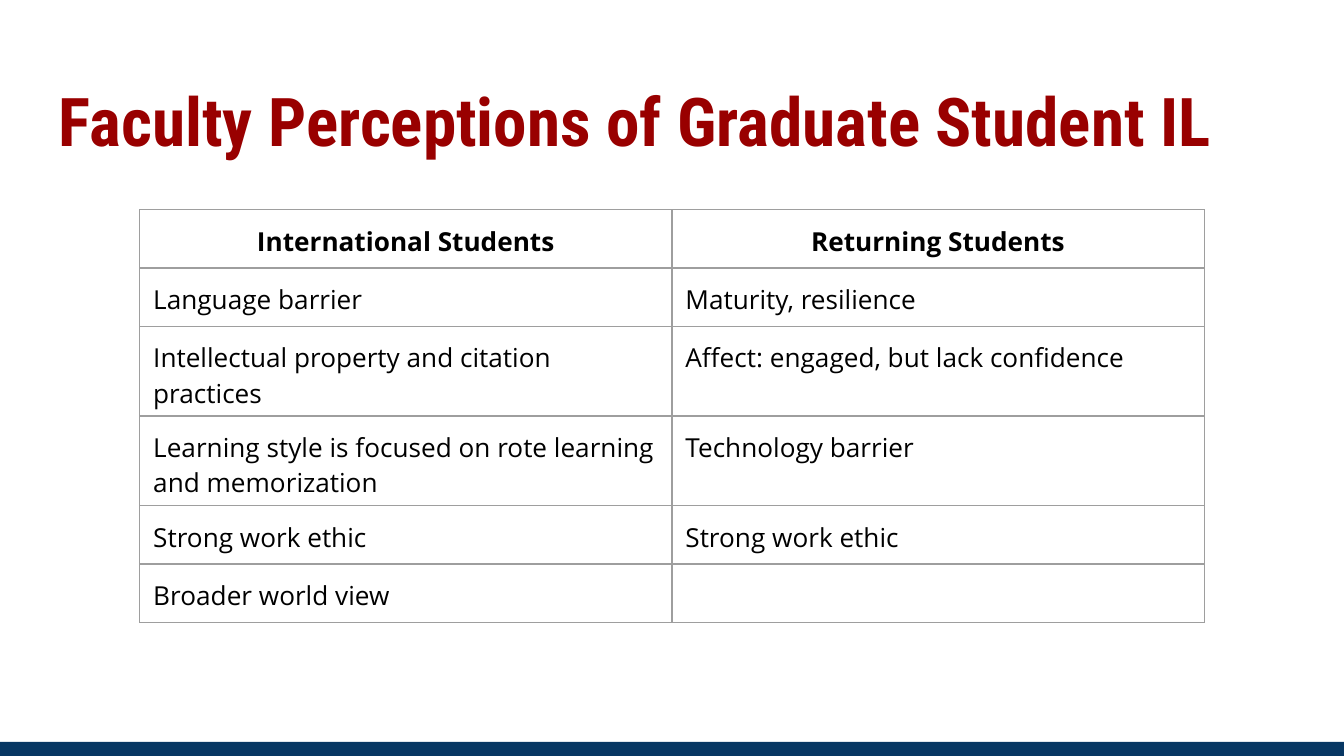
import pptx
import pptx.util
import pptx.dml.color
import pptx.enum.shapes
import pptx.enum.text
import pptx.oxml
import pptx.oxml.ns
from pptx.util import Inches

TITLE = "Faculty Perceptions of Graduate Student IL"
ROWS = [
    ("International Students", "Returning Students"),
    ("Language barrier", "Maturity, resilience"),
    ("Intellectual property and citation practices", "Affect: engaged, but lack confidence"),
    ("Learning style is focused on rote learning and memorization", "Technology barrier"),
    ("Strong work ethic", "Strong work ethic"),
    ("Broader world view", ""),
]
THEME = {
    "title": {"name": "Roboto Condensed", "size": 36, "color": "990000"},
    "body": {"name": "Open Sans", "size": 14, "color": "000000"},
    "footer": "073763",
    "border": "9E9E9E",
    "border_width": 0.75,
}
SLIDE_WIDTH = 10
SLIDE_HEIGHT = SLIDE_WIDTH * 9 / 16
FOOTER_TOP = 5.52
TABLE_LEFT, TABLE_TOP = 1.04, 1.56
TABLE_FRAME = 3.28
COLUMN_WIDTH, ROW_HEIGHT = 3.96, 0.42
MARGIN = 0.1


def rgb(value):
    return pptx.dml.color.RGBColor.from_string(value)


def style_paragraph(paragraph, style, bold):
    font = paragraph.font
    font.name = style["name"]
    font.size = pptx.util.Pt(style["size"])
    font.color.rgb = rgb(style["color"])
    font.bold = bold


def set_margins(box):
    box.margin_left = box.margin_right = Inches(MARGIN)
    box.margin_top = box.margin_bottom = Inches(MARGIN)


def add_borders(cell):
    """Outline all four sides; border elements must precede the cell fill."""
    properties = cell._tc.get_or_add_tcPr()
    width = pptx.util.Pt(THEME["border_width"])
    for index, side in enumerate(("lnL", "lnR", "lnT", "lnB")):
        border = pptx.oxml.parse_xml(
            f'<a:{side} {pptx.oxml.ns.nsdecls("a")} w="{width}"><a:solidFill>'
            f'<a:srgbClr val="{THEME["border"]}"/></a:solidFill></a:{side}>'
        )
        properties.insert(index, border)


def add_footer(slide):
    footer = slide.shapes.add_shape(
        pptx.enum.shapes.MSO_SHAPE.RECTANGLE,
        0, Inches(FOOTER_TOP), Inches(SLIDE_WIDTH), Inches(SLIDE_HEIGHT - FOOTER_TOP),
    )
    footer.shadow.inherit = False
    footer.fill.solid()
    footer.fill.fore_color.rgb = rgb(THEME["footer"])
    footer.line.fill.background()


def add_title(slide):
    title = slide.shapes.add_textbox(Inches(0.34), Inches(0.49), Inches(9.32), Inches(0.77))
    frame = title.text_frame
    frame.word_wrap = True
    frame.vertical_anchor = pptx.enum.text.MSO_ANCHOR.TOP
    set_margins(frame)
    frame.text = TITLE
    style_paragraph(frame.paragraphs[0], THEME["title"], bold=True)


def add_comparison_table(slide):
    graphic_frame = slide.shapes.add_table(
        len(ROWS), len(ROWS[0]), Inches(TABLE_LEFT), Inches(TABLE_TOP),
        Inches(TABLE_FRAME), Inches(TABLE_FRAME),
    )
    table = graphic_frame.table
    table.horz_banding = False
    for column in table.columns:
        column.width = Inches(COLUMN_WIDTH)
    for row_index, texts in enumerate(ROWS):
        is_header = row_index == 0
        table.rows[row_index].height = Inches(ROW_HEIGHT)
        for column_index, text in enumerate(texts):
            cell = table.cell(row_index, column_index)
            cell.text = text
            set_margins(cell)
            cell.fill.background()
            add_borders(cell)
            paragraph = cell.text_frame.paragraphs[0]
            style_paragraph(paragraph, THEME["body"], bold=is_header)
            if is_header:
                paragraph.alignment = pptx.enum.text.PP_ALIGN.CENTER
    # Sizing rows and columns resizes the frame, so its own size comes last.
    graphic_frame.width = graphic_frame.height = Inches(TABLE_FRAME)


def main():
    presentation = pptx.Presentation()
    presentation.slide_width = Inches(SLIDE_WIDTH)
    presentation.slide_height = Inches(SLIDE_HEIGHT)
    slide = presentation.slides.add_slide(presentation.slide_layouts[6])
    add_footer(slide)
    add_title(slide)
    add_comparison_table(slide)
    presentation.save("out.pptx")


if __name__ == "__main__":
    main()
